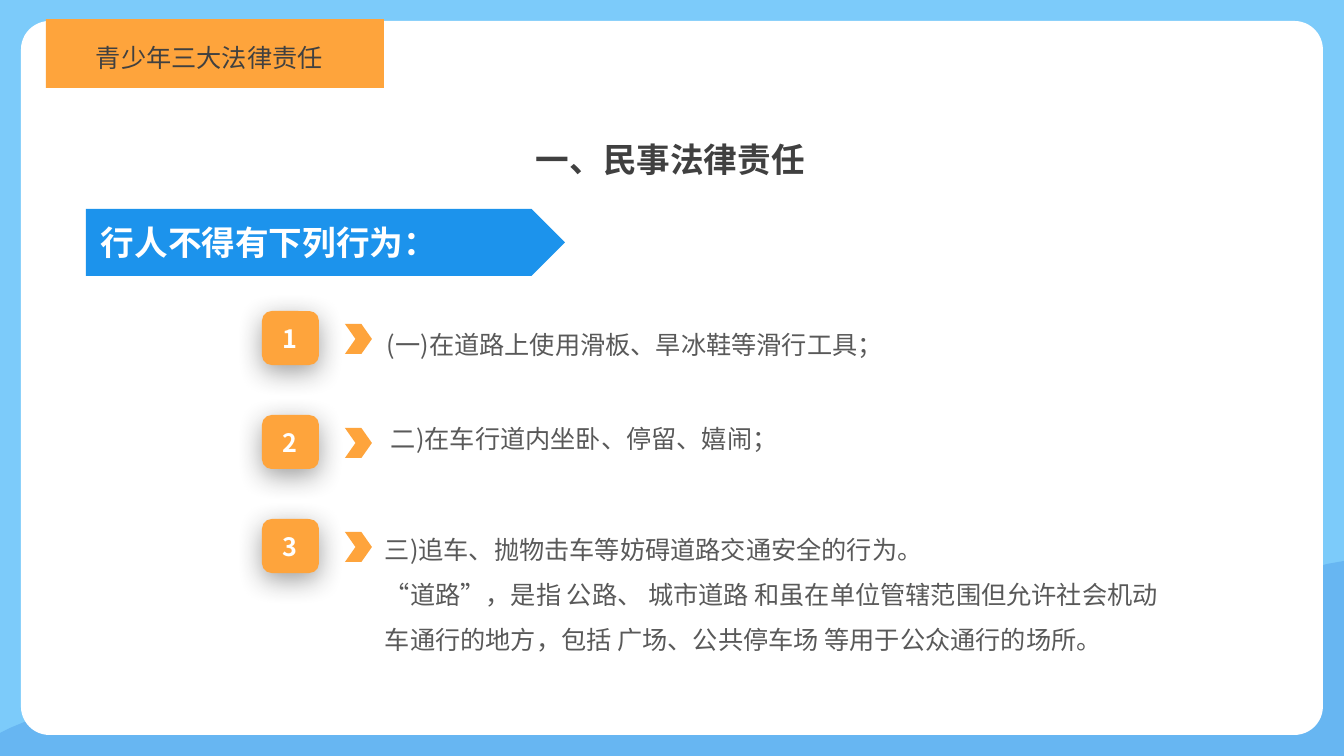
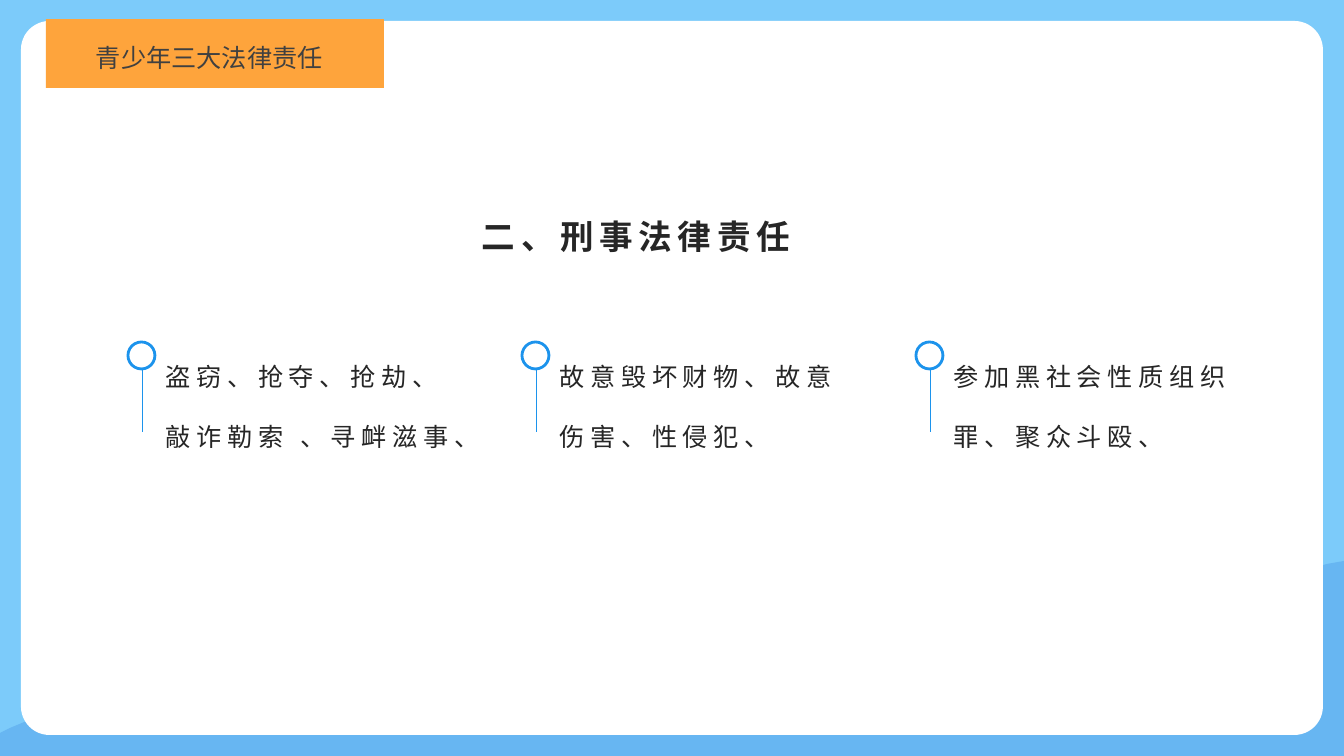
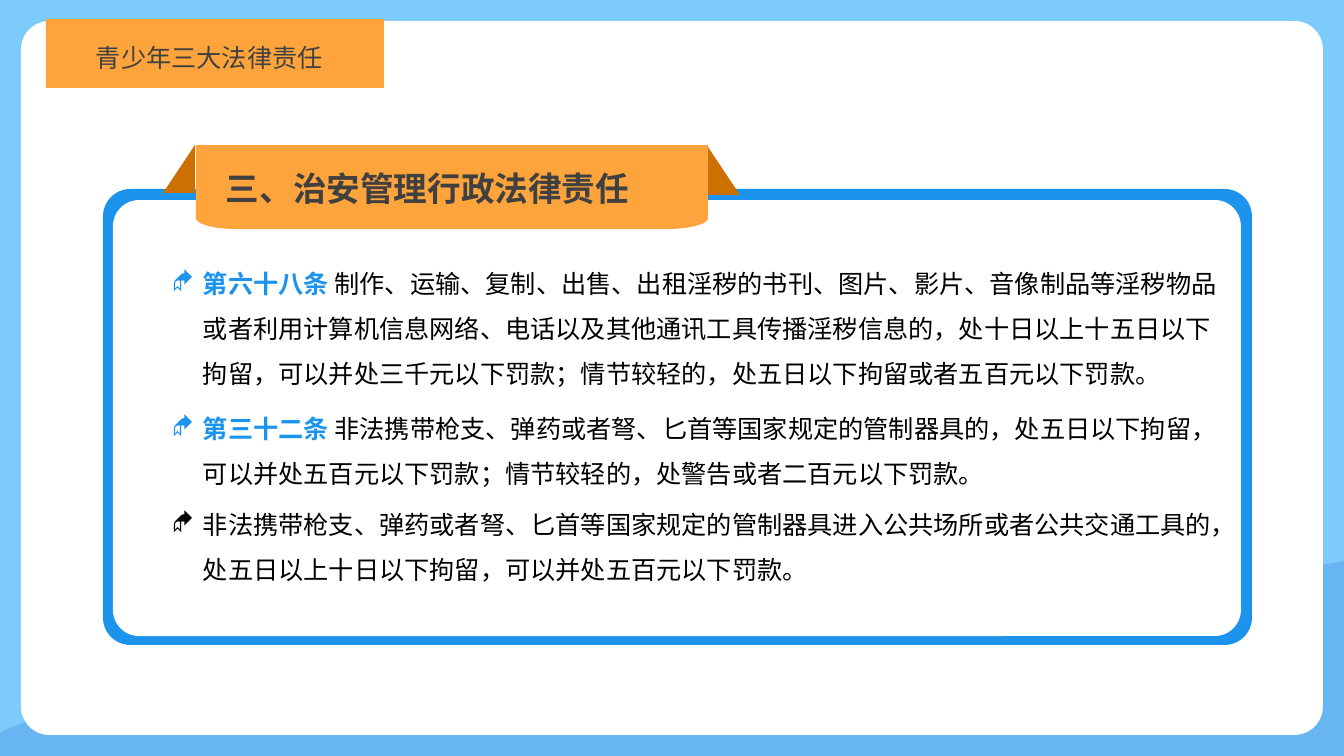
from lxml import etree
from pptx import Presentation
from pptx.dml.color import RGBColor
from pptx.enum import shapes, text
from pptx.oxml import ns
from pptx.util import Pt

PX = 12192000 / 1344
FONT = "Noto Sans CJK SC"
COLORS = {
    "sky": "7CCBFA", "wave": "67B6F2", "white": "FFFFFF", "orange": "FEA43C",
    "fold": "CB7001", "blue": "1C93EC", "heading": "404040", "body": "595959",
    "dark": "262626", "black": "000000",
}
SHAPE = shapes.MSO_SHAPE

SECTION = "青少年三大法律责任"
CIVIL_TITLE = "一、民事法律责任"
BANNER = "行人不得有下列行为："
RULES = [
    (377, 324, 660, 1, ["(一)在道路上使用滑板、旱冰鞋等滑行工具；"]),
    (381, 418, 660, 1, ["二)在车行道内坐卧、停留、嬉闹；"]),
    (375, 514, 801, 1.5, [
        "三)追车、抛物击车等妨碍道路交通安全的行为。",
        "“道路”，是指 公路、 城市道路 和虽在单位管辖范围但允许社会机动车通行的地方，"
        "包括 广场、公共停车场 等用于公众通行的场所。",
    ]),
]
CRIMINAL_TITLE = "二、刑事法律责任"
CRIMES = [
    "盗窃、抢夺、抢劫、敲诈勒索 、寻衅滋事、",
    "故意毁坏财物、故意伤害、性侵犯、",
    "参加黑社会性质组织罪、聚众斗殴、",
]
ORDER_TITLE = "三、治安管理行政法律责任"
ARTICLES = [
    (248, 142, "第六十八条\u00a0",
     "制作、运输、复制、出售、出租淫秽的书刊、图片、影片、音像制品等淫秽物品"
     "或者利用计算机信息网络、电话以及其他通讯工具传播淫秽信息的，处十日以上十五日以下拘留，"
     "可以并处三千元以下罚款；情节较轻的，处五日以下拘留或者五百元以下罚款。"),
    (393, 97, "第三十二条\u00a0",
     "非法携带枪支、弹药或者弩、匕首等国家规定的管制器具的，处五日以下拘留，"
     "可以并处五百元以下罚款；情节较轻的，处警告或者二百元以下罚款。"),
    (489, 97, "",
     "非法携带枪支、弹药或者弩、匕首等国家规定的管制器具进入公共场所或者公共交通工具的，"
     "处五日以上十日以下拘留，可以并处五百元以下罚款。"),
]
WAVE = [
    (1344, 561), (1344, 756), (0, 756), (0, 733), (10, 728),
    (76, 700, 168, 670, 277, 663), (452, 651, 784, 715, 969, 706),
    (1125, 698, 1227, 591, 1327, 564),
]
RIBBON = [
    (196, 145), (708, 145), (708, 218), (708, 224, 690, 229, 667, 229),
    (236, 229), (214, 229, 196, 224, 196, 218),
]


def emu(*lengths):
    return [round(length * PX) for length in lengths]


def rgb(color):
    return RGBColor.from_string(COLORS[color])


def paint(shape, fill):
    shape.shadow.inherit = False
    shape.fill.solid()
    shape.fill.fore_color.rgb = rgb(fill)
    shape.line.fill.background()
    return shape


def add_block(slide, kind, box, fill, adjust=None):
    block = paint(slide.shapes.add_shape(kind, *emu(*box)), fill)
    if adjust is not None:
        block.adjustments[0] = adjust
    return block


def add_outline(slide, steps, fill):
    points = [steps[0]]
    for step in steps[1:]:
        if len(step) == 2:
            points.append(step)
            continue
        x0, y0 = points[-1]
        x1, y1, x2, y2, x3, y3 = step
        for t in (i / 24 for i in range(1, 25)):
            a, b, c, d = (1 - t) ** 3, 3 * t * (1 - t) ** 2, 3 * t * t * (1 - t), t ** 3
            points.append((a * x0 + b * x1 + c * x2 + d * x3,
                           a * y0 + b * y1 + c * y2 + d * y3))
    builder = slide.shapes.build_freeform(*emu(*points[0]), scale=1.0)
    builder.add_line_segments([emu(*point) for point in points[1:]], close=True)
    return paint(builder.convert_to_shape(), fill)


def style(paragraph, size, color, bold=False, spacing=1, tracking=0):
    paragraph.line_spacing = spacing
    font = paragraph.font
    font.size, font.bold, font.name = Pt(size), bold, FONT
    font.color.rgb = rgb(color)
    defaults = paragraph._p.get_or_add_pPr().get_or_add_defRPr()
    etree.SubElement(defaults, ns.qn("a:ea"), typeface=FONT)
    if tracking:
        defaults.set("spc", str(tracking * 100))


def add_text(slide, box, lines, size, color, **look):
    frame = slide.shapes.add_textbox(*emu(*box)).text_frame
    frame.word_wrap = True
    for i, line in enumerate(lines):
        paragraph = frame.paragraphs[0] if i == 0 else frame.add_paragraph()
        paragraph.text = line
        style(paragraph, size, color, **look)
    return frame


def label(shape, words, size, align):
    frame = shape.text_frame
    frame.vertical_anchor = text.MSO_ANCHOR.MIDDLE
    paragraph = frame.paragraphs[0]
    paragraph.text, paragraph.alignment = words, align
    style(paragraph, size, "white", bold=True)
    return frame


def add_soft_shadow(shape):
    effects = shape._element.spPr.find(ns.qn("a:effectLst"))
    shadow = etree.SubElement(effects, ns.qn("a:outerShdw"), blurRad=str(Pt(19)),
                              dist=str(Pt(5)), dir="5400000", algn="t", rotWithShape="0")
    tone = etree.SubElement(shadow, ns.qn("a:srgbClr"), val=COLORS["dark"])
    etree.SubElement(tone, ns.qn("a:alpha"), val="43000")


def add_bullet(paragraph, indent):
    props = paragraph._p.get_or_add_pPr()
    props.set("marL", str(indent))
    props.set("indent", str(-indent))
    etree.SubElement(props, ns.qn("a:buFont"), typeface="Wingdings")
    etree.SubElement(props, ns.qn("a:buChar"), char="◆")


def new_slide(deck):
    slide = deck.slides.add_slide(deck.slide_layouts[6])
    add_block(slide, SHAPE.RECTANGLE, (0, 0, 1344, 756), "sky")
    add_outline(slide, WAVE, "wave")
    add_block(slide, SHAPE.ROUNDED_RECTANGLE, (21, 21, 1302, 714), "white", 0.04)
    add_block(slide, SHAPE.RECTANGLE, (46, 19, 338, 69), "orange")
    add_text(slide, (86, 37, 263, 40), [SECTION], 18, "heading")
    return slide


def civil_slide(deck):
    slide = new_slide(deck)
    add_text(slide, (526, 134, 300, 50), [CIVIL_TITLE], 24, "heading", bold=True)
    banner = add_block(slide, SHAPE.PENTAGON, (86, 209, 479, 67), "blue")
    frame = label(banner, BANNER, 24, text.PP_ALIGN.LEFT)
    frame.margin_left = frame.margin_right = emu(15)[0]
    for i, (x, y, width, spacing, lines) in enumerate(RULES):
        top = 311 + 104 * i
        badge = add_block(slide, SHAPE.ROUNDED_RECTANGLE, (262, top, 57, 54), "orange", 0.18)
        add_soft_shadow(badge)
        label(badge, str(i + 1), 18, text.PP_ALIGN.CENTER)
        add_block(slide, SHAPE.CHEVRON, (345, top + 13, 27, 30), "orange", 0.39)
        add_text(slide, (x, y, width, 10 + 45 * len(lines)), lines, 18, "body", spacing=spacing)


def criminal_slide(deck):
    slide = new_slide(deck)
    add_text(slide, (472, 191, 383, 65), [CRIMINAL_TITLE], 24, "dark",
             bold=True, spacing=1.5, tracking=4)
    for i, crime in enumerate(CRIMES):
        left = 128 + 394 * i
        stem = slide.shapes.add_connector(shapes.MSO_CONNECTOR.STRAIGHT,
                                          *emu(left + 14, 342, left + 14, 432))
        stem.line.color.rgb, stem.line.width = rgb("blue"), Pt(0.25)
        etree.SubElement(stem._element.spPr, ns.qn("a:effectLst"))
        ring = add_block(slide, SHAPE.OVAL, (left, 342, 27, 27), "white")
        ring.line.color.rgb, ring.line.width = rgb("blue"), Pt(2)
        add_text(slide, (left + 28, 326, 309, 130), [crime], 18, "dark", spacing=2, tracking=4)


def order_slide(deck):
    slide = new_slide(deck)
    add_block(slide, SHAPE.ROUNDED_RECTANGLE, (103, 189, 1149, 456), "blue", 0.06)
    add_block(slide, SHAPE.ROUNDED_RECTANGLE, (113, 200, 1128, 436), "white", 0.06)
    left_fold = add_block(slide, SHAPE.RIGHT_TRIANGLE, (155, 153, 48, 32), "fold")
    left_fold.rotation = 270
    add_block(slide, SHAPE.RIGHT_TRIANGLE, (708, 147, 32, 48), "fold")
    add_outline(slide, RIBBON, "orange")
    add_text(slide, (216, 163, 463, 50), [ORDER_TITLE], 24, "heading", bold=True)
    for top, height, number, clause in ARTICLES:
        frame = add_text(slide, (162, top, 1071, height), [], 18, "black")
        paragraph = frame.paragraphs[0]
        add_bullet(paragraph, emu(31)[0])
        style(paragraph, 18, "black", spacing=1.5)
        if number:
            article = paragraph.add_run()
            article.text, article.font.bold = number, True
            article.font.color.rgb = rgb("blue")
        paragraph.add_run().text = clause


def main():
    deck = Presentation()
    deck.slide_width, deck.slide_height = emu(1344, 756)
    civil_slide(deck)
    criminal_slide(deck)
    order_slide(deck)
    deck.save("out.pptx")


if __name__ == "__main__":
    main()
